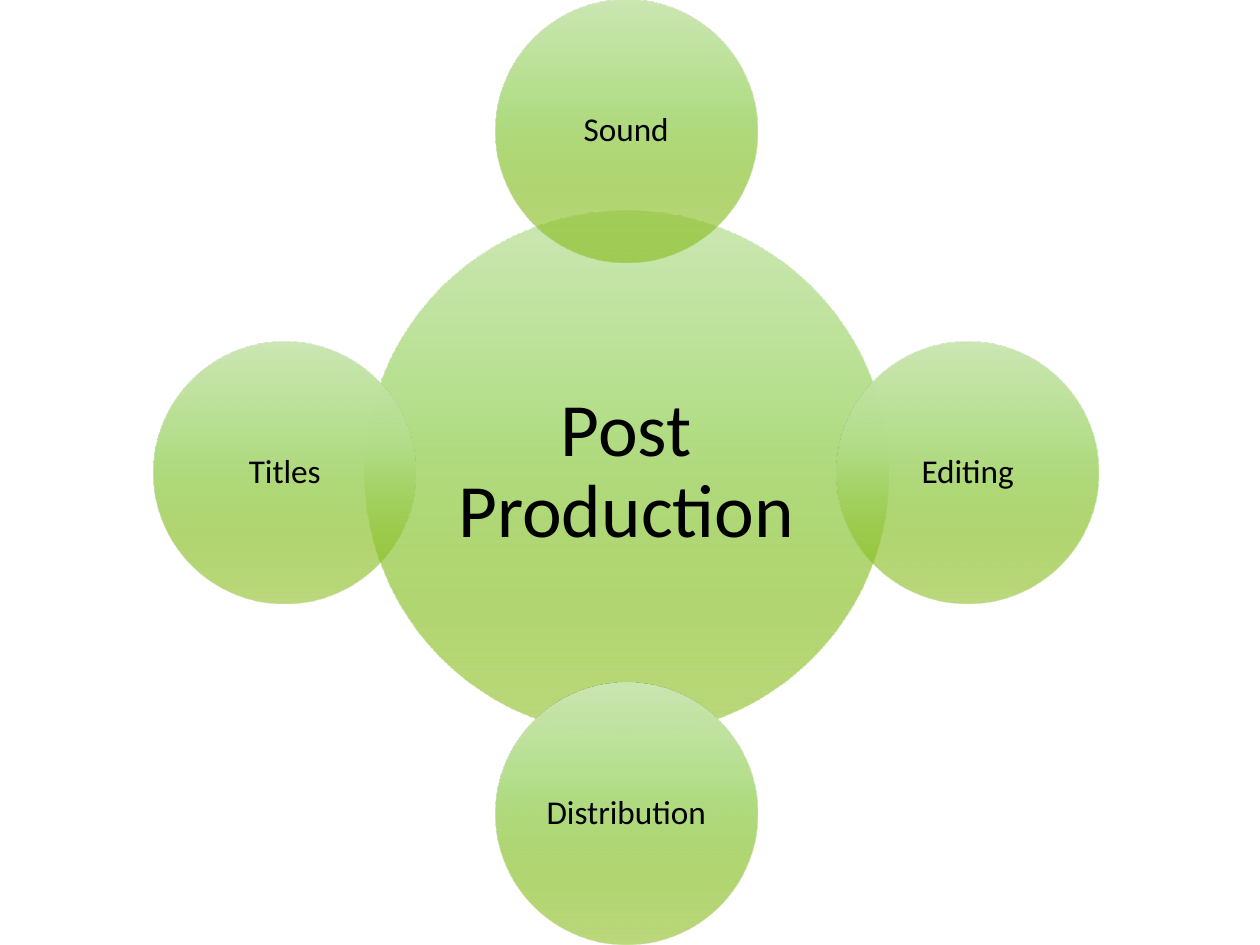
from lxml import etree
from pptx import Presentation
from pptx.dml.color import RGBColor
from pptx.enum.shapes import MSO_SHAPE
from pptx.enum.text import MSO_ANCHOR, PP_ALIGN
from pptx.oxml.ns import qn
from pptx.util import Inches, Pt

COLORS = {"top": "CCE7B4", "middle": "B3DE89", "bottom": "7CB400", "text": "000000"}
STOPS = [(0, "top", 100), (40, "middle", 100), (100, "bottom", 50)]
SATELLITES = [("Sound", 0, -1), ("Editing", 1, 0), ("Distribution", 0, 1), ("Titles", -1, 0)]


def fill_gradient(sp):
    sp.fill.gradient()
    sp.fill.gradient_angle = 270
    stops = sp._element.spPr.find(qn("a:gradFill")).find(qn("a:gsLst"))
    for stop in list(stops):
        stops.remove(stop)
    for position, name, opacity in STOPS:
        stop = etree.SubElement(stops, qn("a:gs"), pos=str(position * 1000))
        color = etree.SubElement(stop, qn("a:srgbClr"), val=COLORS[name])
        if opacity < 100:
            etree.SubElement(color, qn("a:alpha"), val=str(opacity * 1000))


def add_circle(slide, text, cx, cy, diameter, size, inset):
    sp = slide.shapes.add_shape(MSO_SHAPE.OVAL, Inches(cx - diameter / 2),
                                Inches(cy - diameter / 2), Inches(diameter), Inches(diameter))
    sp.shadow.inherit = False
    sp.line.fill.background()
    fill_gradient(sp)
    tf = sp.text_frame
    tf.text = text
    tf.word_wrap = True
    tf.vertical_anchor = MSO_ANCHOR.MIDDLE
    tf.margin_left = tf.margin_right = tf.margin_top = tf.margin_bottom = Inches(inset)
    p = tf.paragraphs[0]
    p.alignment = PP_ALIGN.CENTER
    p.line_spacing = 0.9
    font = p.runs[0].font
    font.name = "Calibri"
    font.size = Pt(size)
    font.color.rgb = RGBColor.from_string(COLORS["text"])


def add_radial_diagram(slide, left, top, side):
    cx, cy = left + side / 2, top + side / 2
    small = 2.08
    orbit = (side - small) / 2
    add_circle(slide, "Post Production", cx, cy, 2 * small, 43, 0.06)
    for text, dx, dy in SATELLITES:
        add_circle(slide, text, cx + dx * orbit, cy + dy * orbit, small, 19, 0.03)


def main():
    prs = Presentation()
    prs.slide_width, prs.slide_height = Inches(10), Inches(7.5)
    slide = prs.slides.add_slide(prs.slide_layouts[6])
    add_radial_diagram(slide, 1.22, 0, 7.5)
    prs.save("out.pptx")


if __name__ == "__main__":
    main()
